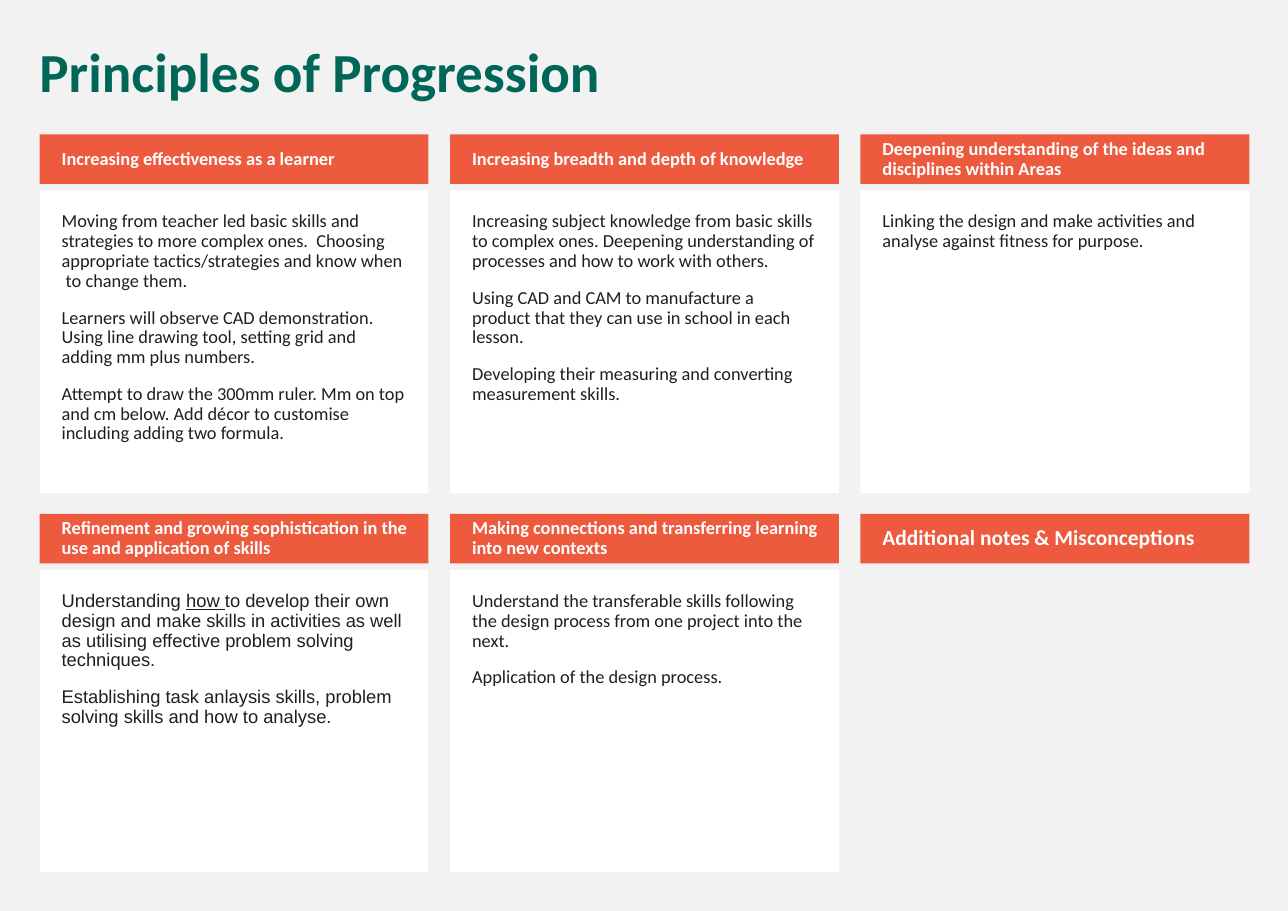
from pptx import Presentation
from pptx.dml.color import RGBColor
from pptx.enum.shapes import MSO_SHAPE
from pptx.enum.text import MSO_ANCHOR, PP_ALIGN
from pptx.util import Inches, Pt

BACKGROUND = RGBColor(0xF2, 0xF2, 0xF2)
WHITE = RGBColor(0xFF, 0xFF, 0xFF)
ORANGE = RGBColor(0xED, 0x5A, 0x3E)
GREEN = RGBColor(0x00, 0x67, 0x58)
DARK = RGBColor(0x1F, 0x1F, 0x1F)

PANELS = [
    ("Increasing effectiveness as a learner", [
        "Moving from teacher led basic skills and strategies to more complex ones.  Choosing appropriate tactics/strategies and know when  to change them.",
        "Learners will observe CAD demonstration. Using line drawing tool, setting grid and adding mm plus numbers.",
        "Attempt to draw the 300mm ruler. Mm on top and cm below. Add décor to customise including adding two formula.",
    ]),
    ("Increasing breadth and depth of knowledge", [
        "Increasing subject knowledge from basic skills to complex ones. Deepening understanding of processes and how to work with others.",
        "Using CAD and CAM to manufacture a product that they can use in school in each lesson.",
        "Developing their measuring and converting measurement skills.",
    ]),
    ("Deepening understanding of the ideas and disciplines within Areas", [
        "Linking the design and make activities and analyse against fitness for purpose.",
    ]),
    ("Refinement and growing sophistication in the use and application of skills", [
        "Understanding |how |to develop their own design and make skills in activities as well as utilising effective problem solving techniques.",
        "Establishing task anlaysis skills, problem solving skills and how to analyse.",
    ]),
    ("Making connections and transferring learning into new contexts", [
        "Understand the transferable skills following the design process from one project into the next.",
        "Application of the design process.",
    ]),
    ("Additional notes & Misconceptions", []),
]

LEFT, COLUMN_STEP, WIDTH = 0.36, 3.725, 3.53
TOP, ROW_STEP = 1.22, 3.445
HEADER_HEIGHT, BODY_OFFSET, BODY_HEIGHT = 0.45, 0.505, 2.75


def write_text(shape, paragraphs, size=12, font="Calibri", color=DARK, bold=False,
               anchor=MSO_ANCHOR.TOP, margins=(0.2, 0.2, 0.2, 0.2)):
    frame = shape.text_frame
    frame.word_wrap = True
    frame.vertical_anchor = anchor
    (frame.margin_left, frame.margin_top,
     frame.margin_right, frame.margin_bottom) = map(Inches, margins)
    for index, text in enumerate(paragraphs):
        paragraph = frame.add_paragraph() if index else frame.paragraphs[0]
        paragraph.alignment = PP_ALIGN.LEFT
        paragraph.line_spacing = 0.9
        paragraph.space_before = Pt(11)
        for part_index, part in enumerate(text.split("|")):
            run = paragraph.add_run()
            run.text = part
            run.font.size = Pt(size)
            run.font.name = font
            run.font.bold = bold
            run.font.underline = part_index == 1
            run.font.color.rgb = color


def add_box(top, left, height, fill):
    shape = slide.shapes.add_shape(
        MSO_SHAPE.RECTANGLE, Inches(left), Inches(top), Inches(WIDTH), Inches(height))
    shape.shadow.inherit = False
    shape.fill.solid()
    shape.fill.fore_color.rgb = fill
    shape.line.fill.background()
    return shape


presentation = Presentation()
presentation.slide_width = Inches(11.69)
presentation.slide_height = Inches(8.27)
slide = presentation.slides.add_slide(presentation.slide_layouts[6])
slide.background.fill.solid()
slide.background.fill.fore_color.rgb = BACKGROUND

title = slide.shapes.add_textbox(Inches(0.26), Inches(0.36), Inches(11.08), Inches(0.65))
write_text(title, ["Principles of Progression"], size=36, color=GREEN, bold=True,
           margins=(0.1, 0.05, 0.1, 0.05))

for index, (heading, paragraphs) in enumerate(PANELS):
    row, column = divmod(index, 3)
    left = LEFT + column * COLUMN_STEP
    top = TOP + row * ROW_STEP
    if paragraphs:
        body = add_box(top + BODY_OFFSET, left, BODY_HEIGHT, WHITE)
        write_text(body, paragraphs, font="Arial" if index == 3 else "Calibri")
    header = add_box(top, left, HEADER_HEIGHT, ORANGE)
    write_text(header, [heading], size=12 if paragraphs else 14, color=WHITE, bold=True,
               anchor=MSO_ANCHOR.MIDDLE, margins=(0.2, 0.05, 0.1, 0.05))

presentation.save("out.pptx")
